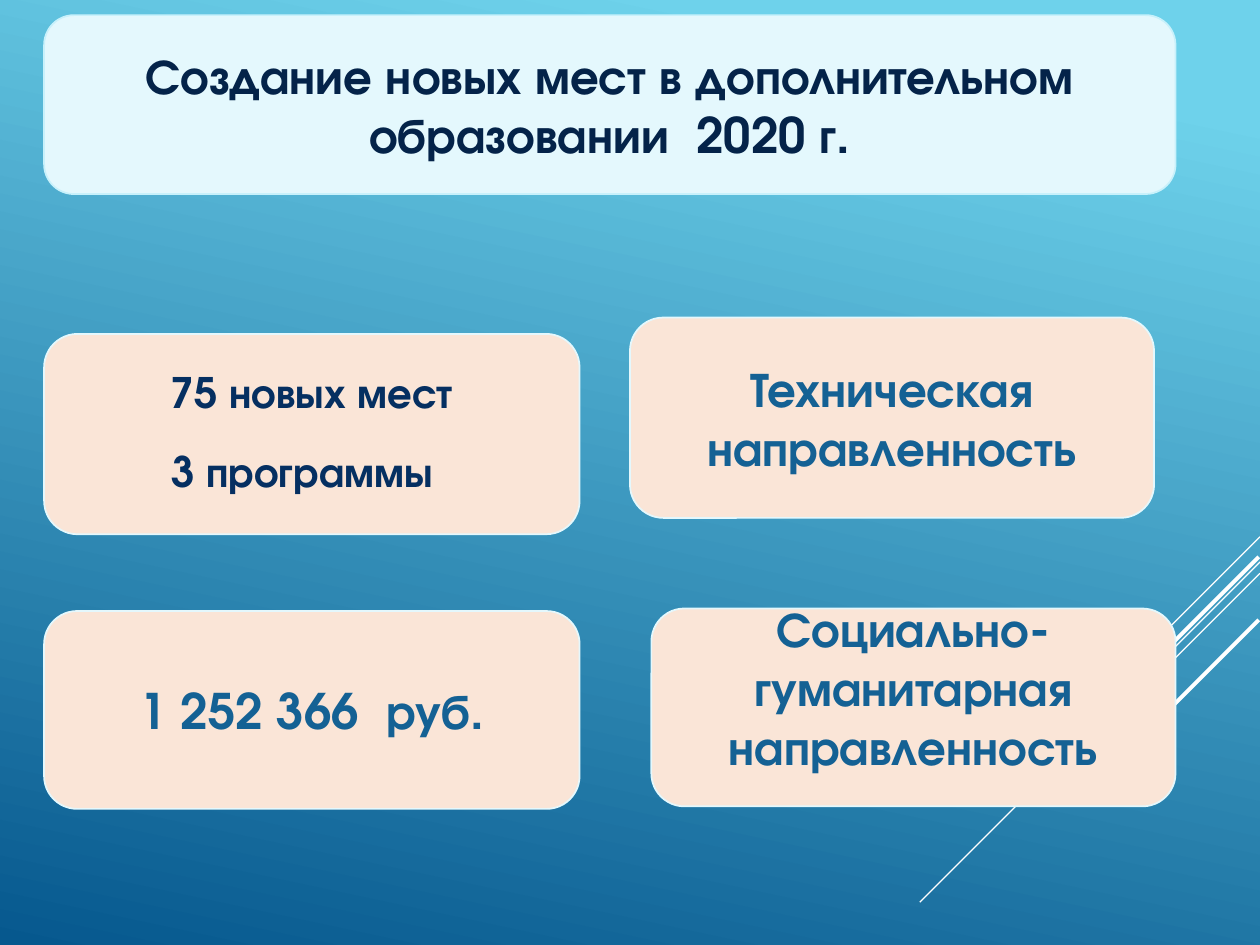
from dataclasses import dataclass
from lxml import etree
from pptx import Presentation
from pptx.dml.color import RGBColor
from pptx.enum import shapes, text
from pptx.oxml.ns import qn
from pptx.util import Inches, Pt


@dataclass(frozen=True)
class Theme:
    font: str = "TeX Gyre Adventor"
    sky: str = "6ED2EB"
    deep: str = "06588E"
    white: str = "FFFFFF"
    ice: str = "E4F8FD"
    ice_edge: str = "C8F1FB"
    peach: str = "FAE5D7"
    title_ink: str = "042349"
    navy: str = "052F61"
    blue: str = "146194"
    large: int = 28
    medium: int = 24
    spacer: int = 40


theme = Theme()
color = RGBColor.from_string

deck = Presentation()
deck.slide_width, deck.slide_height = Inches(10), Inches(7.5)
page = deck.slides.add_slide(deck.slide_layouts[6])

backdrop = page.background.fill
backdrop.gradient()
backdrop.gradient_angle = 360 - 102
for stop, (position, shade) in zip(
    backdrop.gradient_stops, [(0.1, theme.sky), (1, theme.deep)]
):
    stop.position = position
    stop.color.rgb = color(shade)

rays = [
    (10, 4.26, 0.83, 0.75),
    (10, 4.46, 2.7, 0.75),
    (10, 4.55, 1.72, 0.75),
    (9.99, 4.42, 1.57, 2.25),
    (9.99, 4.92, 1.14, 2.25),
]
for right, top, reach, weight in rays:
    ray = page.shapes.add_connector(
        shapes.MSO_CONNECTOR.STRAIGHT,
        Inches(right), Inches(top), Inches(right - reach), Inches(top + reach),
    )
    ray.line.color.rgb = color(theme.white)
    ray.line.width = Pt(weight)
    etree.SubElement(ray.line._get_or_add_ln().getparent(), qn("a:effectLst"))


def add_card(left, top, width, height, fill, edge, words, size, ink):
    box = page.shapes.add_shape(
        shapes.MSO_SHAPE.ROUNDED_RECTANGLE,
        Inches(left), Inches(top), Inches(width), Inches(height),
    )
    box.shadow.inherit = False
    box.fill.solid()
    box.fill.fore_color.rgb = color(fill)
    box.line.color.rgb = color(edge)
    box.line.width = Pt(1)
    frame = box.text_frame
    frame.word_wrap = True
    frame.vertical_anchor = text.MSO_ANCHOR.MIDDLE
    frame.text = words
    for para in frame.paragraphs:
        para.alignment = text.PP_ALIGN.CENTER
        for span in para.runs:
            span.font.name = theme.font
            span.font.size = Pt(size)
            span.font.bold = True
            span.font.color.rgb = color(ink)
    return box


add_card(
    0.35, 0.12, 8.98, 1.42, theme.ice, theme.ice_edge,
    "Создание новых мест в дополнительном образовании  2020 г.",
    theme.large, theme.title_ink,
)

left_column, left_width, right_width = 0.35, 4.25, 4.16
cards = [
    (left_column, 2.65, left_width, 1.59, "75 новых мест\n3 программы", theme.medium, theme.navy),
    (left_column, 4.85, left_width, 1.57, "1\u00a0252\u00a0366  руб.", theme.large, theme.blue),
    (5, 2.52, right_width, 1.59, "Техническая направленность", theme.large, theme.blue),
    (5.17, 4.83, right_width, 1.57, "Социально-гуманитарная\nнаправленность", theme.large, theme.blue),
]
places, cost, technical, social = [
    add_card(left, top, width, height, theme.peach, theme.ice, words, size, ink)
    for left, top, width, height, words, size, ink in cards
]

spacer = places.text_frame.paragraphs[1].add_run()
spacer.text = " "
spacer.font.name = theme.font
spacer.font.size = Pt(theme.spacer)
social.text_frame.margin_bottom = Inches(0.38)

deck.save("out.pptx")
